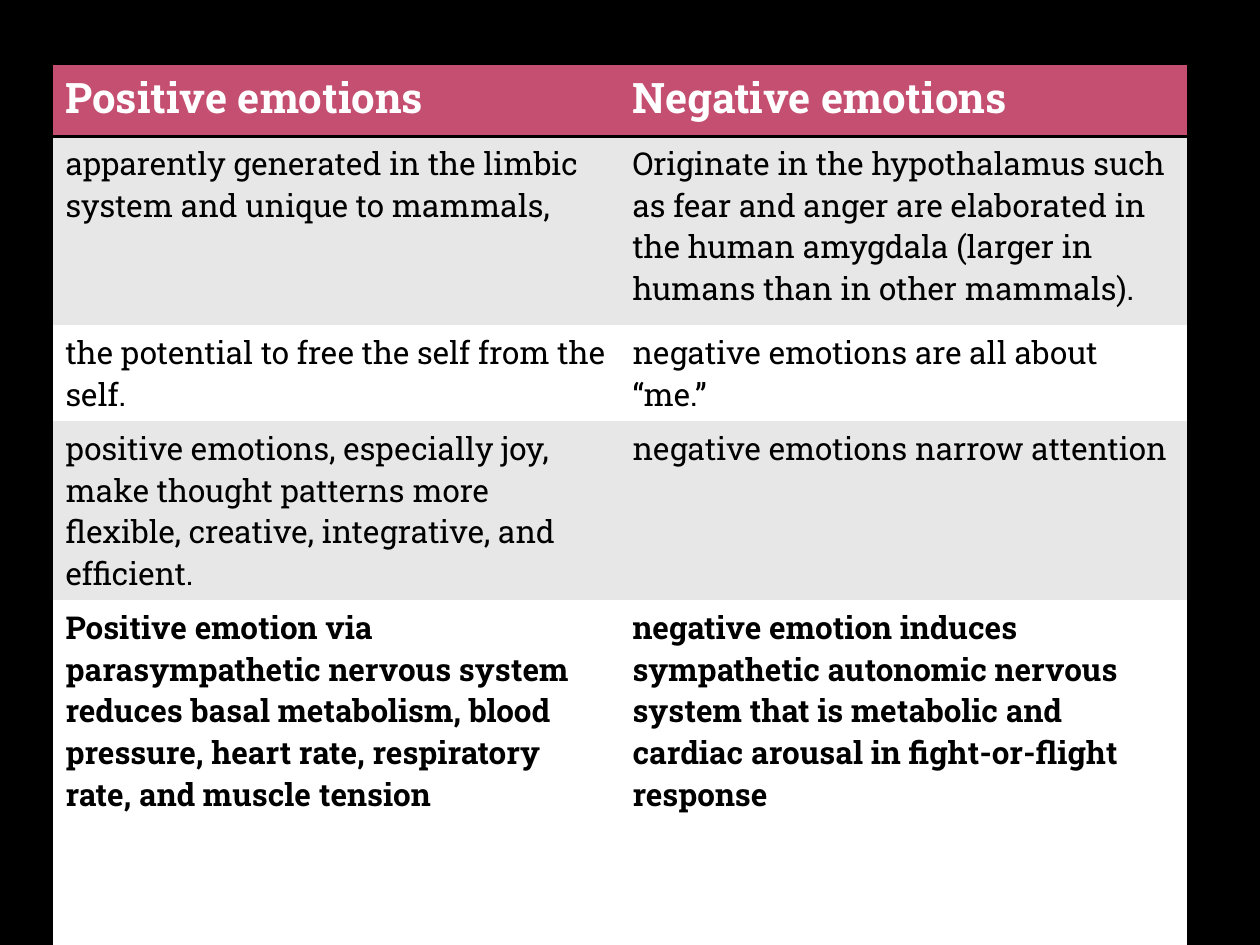
from dataclasses import dataclass

from lxml.etree import SubElement
from pptx import Presentation
from pptx.dml.color import RGBColor
from pptx.oxml.ns import qn
from pptx.util import Inches, Pt

BLACK = RGBColor(0x00, 0x00, 0x00)
WHITE = RGBColor(0xFF, 0xFF, 0xFF)
ROSE = RGBColor(0xC5, 0x4F, 0x71)
GREY = RGBColor(0xE7, 0xE7, 0xE7)
FONT = "Roboto Slab"
PLAIN_STYLE = "{2D5ABB26-0587-4C30-8999-92F81FD0307C}"
WIDTH, HEIGHT = Inches(10), Inches(7.5)
LEFT, TOP, TABLE_WIDTH = 0.042, 0.067, 0.9


@dataclass
class Row:
    height: float
    positive: str
    negative: str
    fill: RGBColor
    color: RGBColor = BLACK
    size: int = 18
    bold: bool = False
    borders: tuple[str, ...] = ()


ROWS = [
    Row(0.58, "Positive emotions", "Negative emotions", ROSE,
        color=WHITE, size=24, bold=True, borders=("lnT", "lnB")),
    Row(1.5, "apparently generated in the limbic system and unique to mammals,",
        "Originate in the hypothalamus such as fear and anger are elaborated in "
        "the human amygdala (larger in humans than in other mammals).", GREY),
    Row(0.47, "the potential to free the self from the self.",
        "negative emotions are all about “me.”", WHITE),
    Row(1.15, "positive emotions, especially joy, make thought patterns more "
        "flexible, creative, integrative, and efficient.",
        "negative emotions narrow attention", GREY),
    Row(2.88, "Positive emotion via parasympathetic nervous system reduces basal "
        "metabolism, blood pressure, heart rate, respiratory rate, and muscle tension",
        "negative emotion induces sympathetic autonomic nervous system that is "
        "metabolic and cardiac arousal in fight-or-flight response", WHITE,
        bold=True, borders=("lnB",)),
]


def add_border(cell, side: str, color: RGBColor, width: float) -> None:
    ln = SubElement(cell._tc.get_or_add_tcPr(), qn(f"a:{side}"), w=str(Pt(width)))
    fill = SubElement(ln, qn("a:solidFill"))
    SubElement(fill, qn("a:srgbClr"), val=str(color))


def write_text(cell, text: str, *, size: int, color: RGBColor, bold: bool) -> None:
    r = cell.text_frame.paragraphs[0].add_run()
    r.text = text
    r.font.name = FONT
    r.font.size = Pt(size)
    r.font.bold = bold
    r.font.color.rgb = color


def draw_cell(cell, text: str, row: Row) -> None:
    for side in row.borders:
        add_border(cell, side, BLACK, 2)
    cell.fill.solid()
    cell.fill.fore_color.rgb = row.fill
    write_text(cell, text, size=row.size, color=row.color, bold=row.bold)


def draw_table(s, rows: list[Row]) -> None:
    height = Inches(sum(row.height for row in rows))
    frame = s.shapes.add_table(len(rows), 2, int(WIDTH * LEFT), int(HEIGHT * TOP),
                               int(WIDTH * TABLE_WIDTH), height)
    table = frame.table
    table.first_row = table.horz_banding = False
    table._tbl.tblPr.find(qn("a:tableStyleId")).text = PLAIN_STYLE
    for i, row in enumerate(rows):
        table.rows[i].height = Inches(row.height)
        for j, text in enumerate((row.positive, row.negative)):
            draw_cell(table.cell(i, j), text, row)


def main() -> None:
    prs = Presentation()
    prs.slide_width, prs.slide_height = WIDTH, HEIGHT
    s = prs.slides.add_slide(prs.slide_layouts[6])
    s.background.fill.solid()
    s.background.fill.fore_color.rgb = BLACK
    draw_table(s, ROWS)
    prs.save("out.pptx")


if __name__ == "__main__":
    main()
